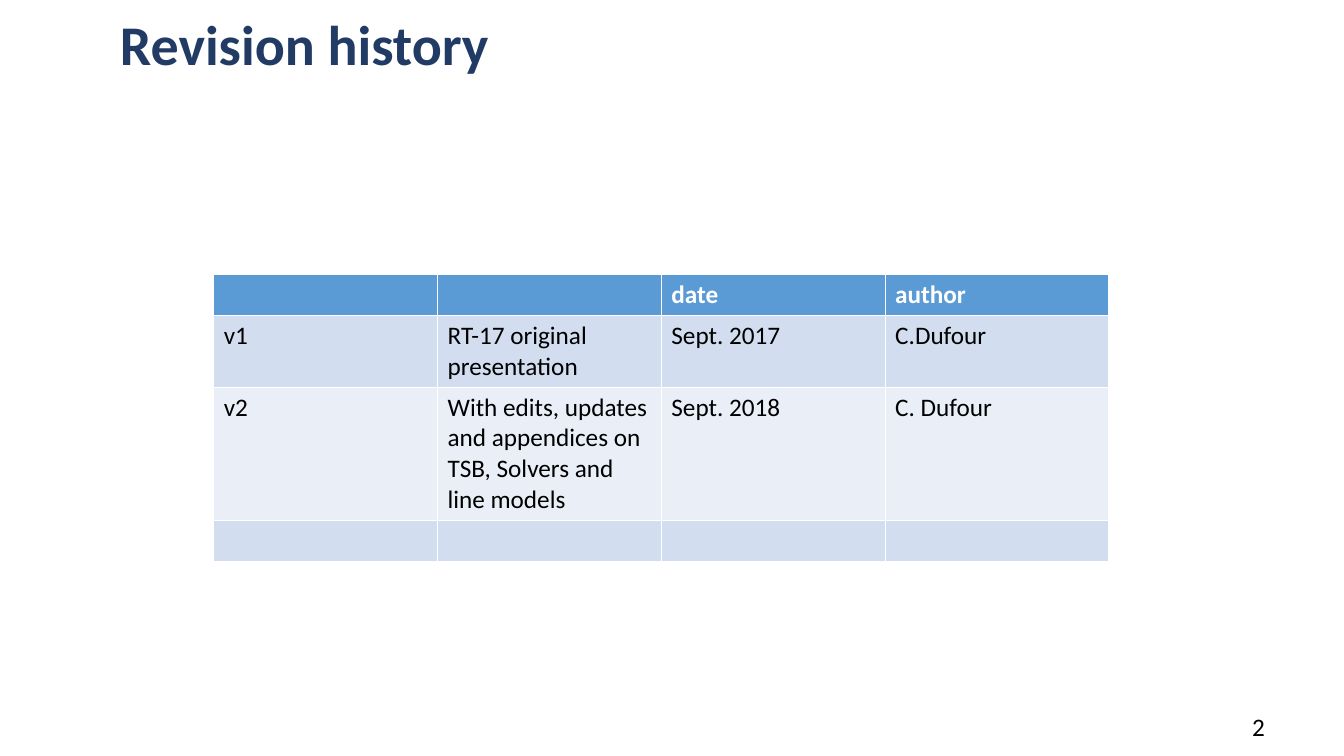
from pptx import Presentation
from pptx.dml.color import RGBColor
from pptx.enum.text import MSO_ANCHOR, MSO_AUTO_SIZE, PP_ALIGN
from pptx.util import Inches, Pt

LEFT, MIDDLE, NO_FIT = PP_ALIGN.LEFT, MSO_ANCHOR.MIDDLE, MSO_AUTO_SIZE.NONE
TITLE_ONLY = 5

# Content
TITLE = "Revision history"
PAGE_NUMBER = "2"
REVISIONS = [
    ("", "", "date", "author"),
    ("v1", "RT-17 original presentation", "Sept. 2017", "C.Dufour"),
    ("v2", "With edits, updates and appendices on TSB, Solvers and line models",
     "Sept. 2018", "C. Dufour"),
    ("", "", "", ""),
]

# Look
COLORS = {"title": "223B64", "header": "5B9BD5", "odd": "D2DEEF",
          "even": "EAEFF7", "white": "FFFFFF", "black": "000000"}
FORMATS = {
    "title": {"name": "Calibri", "size": Pt(40), "bold": True},
    "header": {"name": "Calibri", "size": Pt(18), "bold": True},
    "body": {"name": "Calibri", "size": Pt(18), "bold": False},
}
COLUMN_WIDTH, ROW_HEIGHT = 2.22, 0.41


def color(name):
    return RGBColor.from_string(COLORS[name])


def format_text(paragraph, style, color_name):
    for attribute, value in FORMATS[style].items():
        setattr(paragraph.font, attribute, value)
    paragraph.font.color.rgb = color(color_name)


def place(shape, left, top, width, height):
    shape.left, shape.top = Inches(left), Inches(top)
    shape.width, shape.height = Inches(width), Inches(height)


prs = Presentation()
prs.slide_width, prs.slide_height = Inches(13.33), Inches(7.5)
slide = prs.slides.add_slide(prs.slide_layouts[TITLE_ONLY])

# Title
title = slide.shapes.title
place(title, 1.09, 0.16, 12.1, 0.63)
title.text_frame.text = TITLE
title.text_frame.auto_size = NO_FIT
title.text_frame.vertical_anchor = MIDDLE
heading = title.text_frame.paragraphs[0]
heading.alignment = LEFT
heading.line_spacing = 0.9
format_text(heading, "title", "title")

# Revision table
row_count, column_count = len(REVISIONS), len(REVISIONS[0])
table = slide.shapes.add_table(
    row_count, column_count, Inches(2.12), Inches(2.72),
    Inches(COLUMN_WIDTH * column_count), Inches(ROW_HEIGHT * row_count)).table
for column in table.columns:
    column.width = Inches(COLUMN_WIDTH)
for row_index, revision in enumerate(REVISIONS):
    table.rows[row_index].height = Inches(ROW_HEIGHT)
    if row_index == 0:
        band, style, text_color = "header", "header", "white"
    else:
        band, style, text_color = "odd" if row_index % 2 else "even", "body", "black"
    for column_index, entry in enumerate(revision):
        cell = table.cell(row_index, column_index)
        cell.fill.solid()
        cell.fill.fore_color.rgb = color(band)
        cell.text = entry
        format_text(cell.text_frame.paragraphs[0], style, text_color)

# Page number
page_number = slide.shapes.add_textbox(Inches(12.32), Inches(7.01), Inches(0.5), Inches(0.4))
page_number.text_frame.word_wrap = True
page_number.text_frame.text = PAGE_NUMBER
format_text(page_number.text_frame.paragraphs[0], "body", "black")

prs.save("out.pptx")
